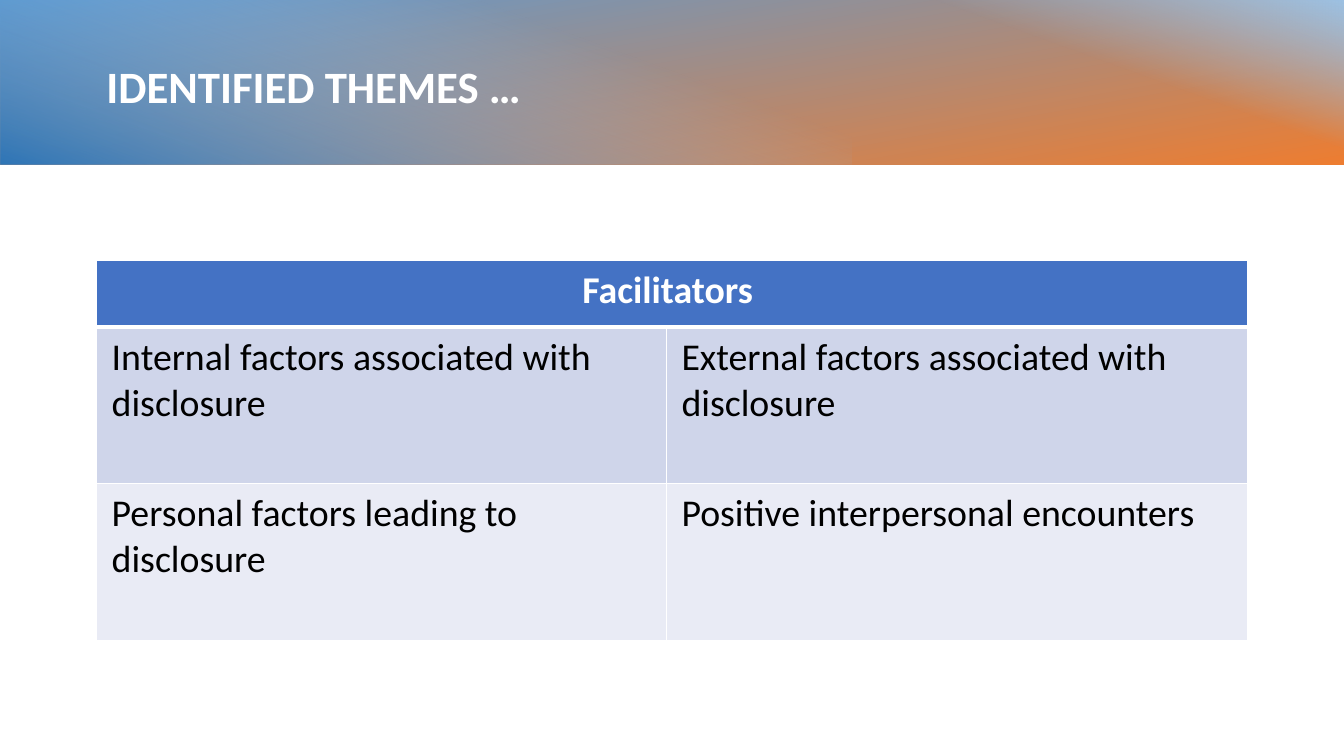
from lxml.etree import SubElement
from pptx import Presentation
from pptx.dml.color import RGBColor
from pptx.enum.shapes import MSO_SHAPE
from pptx.enum.text import MSO_ANCHOR, PP_ALIGN
from pptx.oxml.ns import qn
from pptx.util import Pt

# Content
TITLE = "IDENTIFIED THEMES …"
HEADER = "Facilitators "
THEMES = [
    ("Internal factors associated with disclosure",
     "External factors associated with disclosure"),
    ("Personal factors leading to disclosure",
     "Positive interpersonal encounters"),
]
ROW_FILLS = ["CFD5EA", "E9EBF5"]
FONT = "Calibri"

# Banner layers: left, width, rotation, clockwise angle, stops (position, colour, opacity)
BANNER_TOP, BANNER_HEIGHT = -2, 119.5
BANNER_LAYERS = [
    (0, 960, 270, 170, [(0, "5B9BD5", 100), (100, "ED7D31", 100)]),
    (561.5, 398.5, 270, 20, [(59, "9DC3E6", 0), (100, "9DC3E6", 100)]),
    (0, 608, 90, 20, [(29, "9DC3E6", 0), (100, "2E75B6", 100)]),
]

# Table geometry
TABLE_LEFT, TABLE_TOP = 69, 186
COLUMN_WIDTHS = [407, 415]
ROW_HEIGHTS = [47.5, 112, 112]


def color(value):
    return RGBColor.from_string(value)


def add_text(para, text, size, value, bold=False):
    span = para.add_run()
    span.text = text
    span.font.name = FONT
    span.font.size = Pt(size)
    span.font.bold = bold
    span.font.color.rgb = color(value)


def add_banner_layer(slide, left, width, rotation, angle, stops):
    # The frame is upright before its quarter turn about the centre
    center_x = left + width / 2
    center_y = BANNER_TOP + BANNER_HEIGHT / 2
    layer = slide.shapes.add_shape(
        MSO_SHAPE.RECTANGLE, Pt(center_x - BANNER_HEIGHT / 2),
        Pt(center_y - width / 2), Pt(BANNER_HEIGHT), Pt(width))
    layer.rotation = rotation
    layer.shadow.inherit = False
    layer.line.fill.background()
    layer.fill.gradient()
    layer.fill.gradient_angle = 360 - angle
    for stop, (position, value, opacity) in zip(layer.fill.gradient_stops, stops):
        stop.position = position / 100
        stop.color.rgb = color(value)
    swatches = layer.fill._xPr.iter(qn("a:srgbClr"))
    for swatch, (position, value, opacity) in zip(swatches, stops):
        if opacity < 100:
            SubElement(swatch, qn("a:alpha"), val=str(opacity * 1000))


def set_borders(cell, top, bottom):
    properties = cell._tc.get_or_add_tcPr()
    for side, width in (("L", 1), ("R", 1), ("T", top), ("B", bottom)):
        line = SubElement(properties, qn("a:ln" + side), w=str(Pt(width)))
        fill = SubElement(line, qn("a:solidFill"))
        SubElement(fill, qn("a:srgbClr"), val="FFFFFF")


def fill_cell(cell, text, fill, value, bold=False, align=PP_ALIGN.LEFT, top=1, bottom=1):
    set_borders(cell, top, bottom)
    cell.fill.solid()
    cell.fill.fore_color.rgb = color(fill)
    cell.margin_left = cell.margin_right = Pt(10.8)
    cell.margin_top = cell.margin_bottom = Pt(5.2)
    para = cell.text_frame.paragraphs[0]
    para.alignment = align
    if text:
        add_text(para, text, 27, value, bold)


def main():
    deck = Presentation()
    deck.slide_width, deck.slide_height = Pt(960), Pt(540)
    slide = deck.slides.add_slide(deck.slide_layouts[6])

    # Banner
    for layer in BANNER_LAYERS:
        add_banner_layer(slide, *layer)

    # Title
    box = slide.shapes.add_textbox(Pt(69), Pt(24), Pt(825), Pt(79))
    frame = box.text_frame
    frame.word_wrap = True
    frame.vertical_anchor = MSO_ANCHOR.MIDDLE
    para = frame.paragraphs[0]
    para.line_spacing = 0.9
    add_text(para, TITLE, 32, "FFFFFF", bold=True)

    # Table
    table = slide.shapes.add_table(
        len(ROW_HEIGHTS), len(COLUMN_WIDTHS), Pt(TABLE_LEFT), Pt(TABLE_TOP),
        Pt(sum(COLUMN_WIDTHS)), Pt(sum(ROW_HEIGHTS))).table
    for column, width in zip(table.columns, COLUMN_WIDTHS):
        column.width = Pt(width)
    for row, height in zip(table.rows, ROW_HEIGHTS):
        row.height = Pt(height)

    table.cell(0, 0).merge(table.cell(0, 1))
    for column, text in enumerate((HEADER, "")):
        fill_cell(table.cell(0, column), text, "4472C4", "FFFFFF",
                  bold=True, align=PP_ALIGN.CENTER, bottom=3)
    for row, (themes, fill) in enumerate(zip(THEMES, ROW_FILLS), start=1):
        for column, theme in enumerate(themes):
            fill_cell(table.cell(row, column), theme, fill, "000000",
                      top=3 if row == 1 else 1)

    deck.save("out.pptx")


if __name__ == "__main__":
    main()
